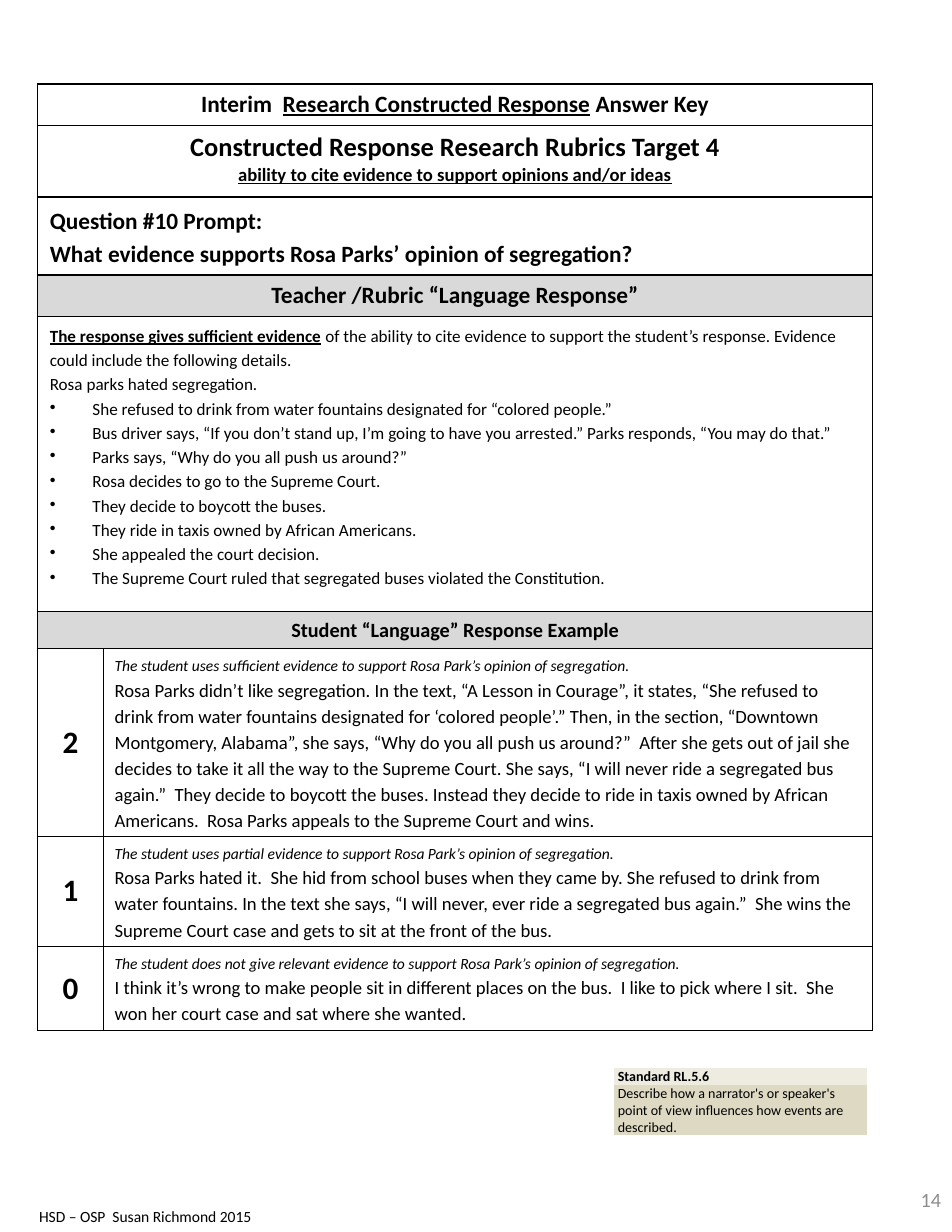
from lxml import etree
from pptx import Presentation
from pptx.dml.color import RGBColor
from pptx.enum.text import MSO_ANCHOR, PP_ALIGN
from pptx.oxml.ns import qn
from pptx.util import Pt

LEFT, CENTER, RIGHT = PP_ALIGN.LEFT, PP_ALIGN.CENTER, PP_ALIGN.RIGHT
TOP, MIDDLE = MSO_ANCHOR.TOP, MSO_ANCHOR.MIDDLE

THEME = {
    "font": "Calibri", "ink": "000000", "muted": "8C8C8C",
    "band": "D9D9D9", "standard_head": "EEECE1", "standard_body": "DDD9C3",
    "title": 17, "heading": 15, "subheading": 13, "body": 12, "detail": 11,
    "small": 10, "standard": 9, "score": 20, "page": 13,
    "spacing": 1.15, "indent": 27.4, "border": 1,
}

# Content: a run is (text, type size, styles), where styles are letters of "biu"
INTRO = [
    [("The response gives sufficient evidence", "detail", "bu"),
     (" ", "detail", "b"),
     ("of the ability to cite evidence to support the student’s response. "
      "Evidence could include the following details.", "detail", "")],
    [("Rosa parks hated segregation.", "detail", "")],
]
DETAILS = [
    "She refused to drink from water fountains designated for “colored people.”",
    "Bus driver says, “If you don’t stand up, I’m going to have you arrested.” "
    "Parks responds, “You may do that.”",
    "Parks says, “Why do you all push us around?”",
    "Rosa decides to go to the Supreme Court.",
    "They decide to boycott the buses.",
    "They ride in taxis owned by African Americans.",
    "She appealed the court decision.",
    "The Supreme Court ruled that segregated buses violated the Constitution.",
]
# Full-width rows: (height, alignment, fill, line spacing, paragraphs, bullets)
HEADER_ROWS = [
    (26.5, CENTER, None, None, [[("Interim  ", "heading", "b"),
                                 ("Research Constructed Response", "heading", "bu"),
                                 (" Answer Key", "heading", "b")]], []),
    (46.2, CENTER, None, None, [
        [("Constructed Response Research Rubrics Target 4", "title", "b")],
        [("ability to cite evidence to support opinions and/or ideas", "body", "bu")]], []),
    (50.2, LEFT, None, THEME["spacing"], [
        [("Question #10 Prompt:", "heading", "b")],
        [("What evidence supports Rosa Parks’ opinion of segregation?", "heading", "b")]], []),
    (26.7, CENTER, THEME["band"], None,
     [[("Teacher /Rubric “Language Response”", "heading", "b")]], []),
    (189.8, LEFT, None, THEME["spacing"], INTRO, DETAILS),
    (23.8, CENTER, THEME["band"], None,
     [[("Student “Language” Response Example", "subheading", "b")]], []),
]
# Score rows: (height, score, criterion, sample answer)
SCORE_ROWS = [
    (120.6, "2", "The student uses sufficient evidence to support Rosa Park’s opinion of segregation.",
     "Rosa Parks didn’t like segregation. In the text, “A Lesson in Courage”, it states, "
     "“She refused to drink from water fountains designated for ‘colored people’.” Then, in the "
     "section, “Downtown Montgomery, Alabama”, she says, “Why do you all push us around?”  After "
     "she gets out of jail she decides to take it all the way to the Supreme Court. She says, “I "
     "will never ride a segregated bus again.”  They decide to boycott the buses. Instead they "
     "decide to ride in taxis owned by African Americans.  Rosa Parks appeals to the Supreme "
     "Court and wins."),
    (70.6, "1", "The student uses partial evidence to support Rosa Park’s opinion of segregation.",
     "Rosa Parks hated it.  She hid from school buses when they came by. She refused to drink from "
     "water fountains. In the text she says, “I will never, ever ride a segregated bus again.”  "
     "She wins the Supreme Court case and gets to sit at the front of the bus."),
    (53.8, "0", "The student does not give relevant evidence to support Rosa Park’s opinion of segregation.",
     "I think it’s wrong to make people sit in different places on the bus.  I like to pick where "
     "I sit.  She won her court case and sat where she wanted."),
]
# Standard rows: (height, fill, styles, anchor, text)
STANDARD_ROWS = [
    (11, THEME["standard_head"], "b", MIDDLE, "Standard RL.5.6"),
    (32, THEME["standard_body"], "", TOP,
     "Describe how a narrator's or speaker's point of view influences how events are described."),
]


def add_bullet(p):
    pPr = p._p.get_or_add_pPr()
    pPr.set("marL", str(Pt(THEME["indent"])))
    pPr.set("indent", str(-Pt(THEME["indent"])))
    etree.SubElement(pPr, qn("a:buChar")).set("char", "•")


def write(tf, paragraphs, align=LEFT, spacing=None, bullets=(), color=THEME["ink"]):
    lines = [(runs, False) for runs in paragraphs]
    lines += [([(text, "detail", "")], True) for text in bullets]
    for i, (runs, bulleted) in enumerate(lines):
        p = tf.add_paragraph() if i else tf.paragraphs[0]
        p.alignment = align
        if spacing:
            p.line_spacing = spacing
        if bulleted:
            add_bullet(p)
        for text, size, styles in runs:
            r = p.add_run()
            r.text = text
            f = r.font
            f.name, f.size = THEME["font"], Pt(THEME[size])
            f.bold, f.italic, f.underline = ("b" in styles, "i" in styles, "u" in styles)
            f.color.rgb = RGBColor.from_string(color)


def set_borders(cell, width):
    tcPr = cell._tc.get_or_add_tcPr()
    for i, side in enumerate(("lnL", "lnR", "lnT", "lnB")):
        ln = etree.Element(qn("a:" + side))
        tcPr.insert(i, ln)
        if width:
            ln.set("w", str(Pt(width)))
            fill = etree.SubElement(ln, qn("a:solidFill"))
            etree.SubElement(fill, qn("a:srgbClr")).set("val", THEME["ink"])
        else:
            etree.SubElement(ln, qn("a:noFill"))


def format_cell(cell, inset_x, inset_y, anchor=TOP, fill=None):
    cell.margin_left = cell.margin_right = Pt(inset_x)
    cell.margin_top = cell.margin_bottom = Pt(inset_y)
    cell.vertical_anchor = anchor
    if fill:
        cell.fill.solid()
        cell.fill.fore_color.rgb = RGBColor.from_string(fill)
    else:
        cell.fill.background()


def add_table(s, x, y, widths, heights, border):
    table = s.shapes.add_table(len(heights), len(widths), Pt(x), Pt(y),
                               Pt(sum(widths)), Pt(sum(heights))).table
    table.first_row = table.horz_banding = False
    for col, width in zip(table.columns, widths):
        col.width = Pt(width)
    for row, height in zip(table.rows, heights):
        row.height = Pt(height)
    for cell in table.iter_cells():
        set_borders(cell, border)
    return table


def add_text(s, x, y, w, h, text, size, align, anchor, color):
    tf = s.shapes.add_textbox(Pt(x), Pt(y), Pt(w), Pt(h)).text_frame
    tf.word_wrap = True
    tf.vertical_anchor = anchor
    write(tf, [[(text, size, "")]], align, color=color)


prs = Presentation()
prs.slide_width, prs.slide_height = Pt(612), Pt(792)
s = prs.slides.add_slide(prs.slide_layouts[6])

# Footer and page number
add_text(s, 18, 772.6, 444, 19.4, "HSD – OSP  Susan Richmond 2015", "small", LEFT, TOP, THEME["ink"])
add_text(s, 564.5, 749.5, 47.5, 42.5, "14", "page", RIGHT, MIDDLE, THEME["muted"])

# Rubric table
heights = [row[0] for row in HEADER_ROWS + SCORE_ROWS]
rubric = add_table(s, 24, 54, [42.5, 494.5], heights, THEME["border"])
for i, (_, align, fill, spacing, paragraphs, bullets) in enumerate(HEADER_ROWS):
    cell = rubric.cell(i, 0)
    cell.merge(rubric.cell(i, 1))
    format_cell(cell, 8, 4, fill=fill)
    write(cell.text_frame, paragraphs, align, spacing, bullets)
for i, (_, score, criterion, answer) in enumerate(SCORE_ROWS, len(HEADER_ROWS)):
    score_cell, answer_cell = rubric.cell(i, 0), rubric.cell(i, 1)
    format_cell(score_cell, 8, 4, MIDDLE)
    write(score_cell.text_frame, [[(score, "score", "b")]], CENTER)
    format_cell(answer_cell, 7.2, 3.6)
    write(answer_cell.text_frame, [[(criterion, "small", "i")], [(answer, "body", "")]],
          spacing=THEME["spacing"])

# Standard table
standard = add_table(s, 394.6, 686.4, [163], [row[0] for row in STANDARD_ROWS], None)
for i, (_, fill, styles, anchor, text) in enumerate(STANDARD_ROWS):
    cell = standard.cell(i, 0)
    format_cell(cell, 2.6, 0, anchor, fill)
    write(cell.text_frame, [[(text, "standard", styles)]])

prs.save("out.pptx")
